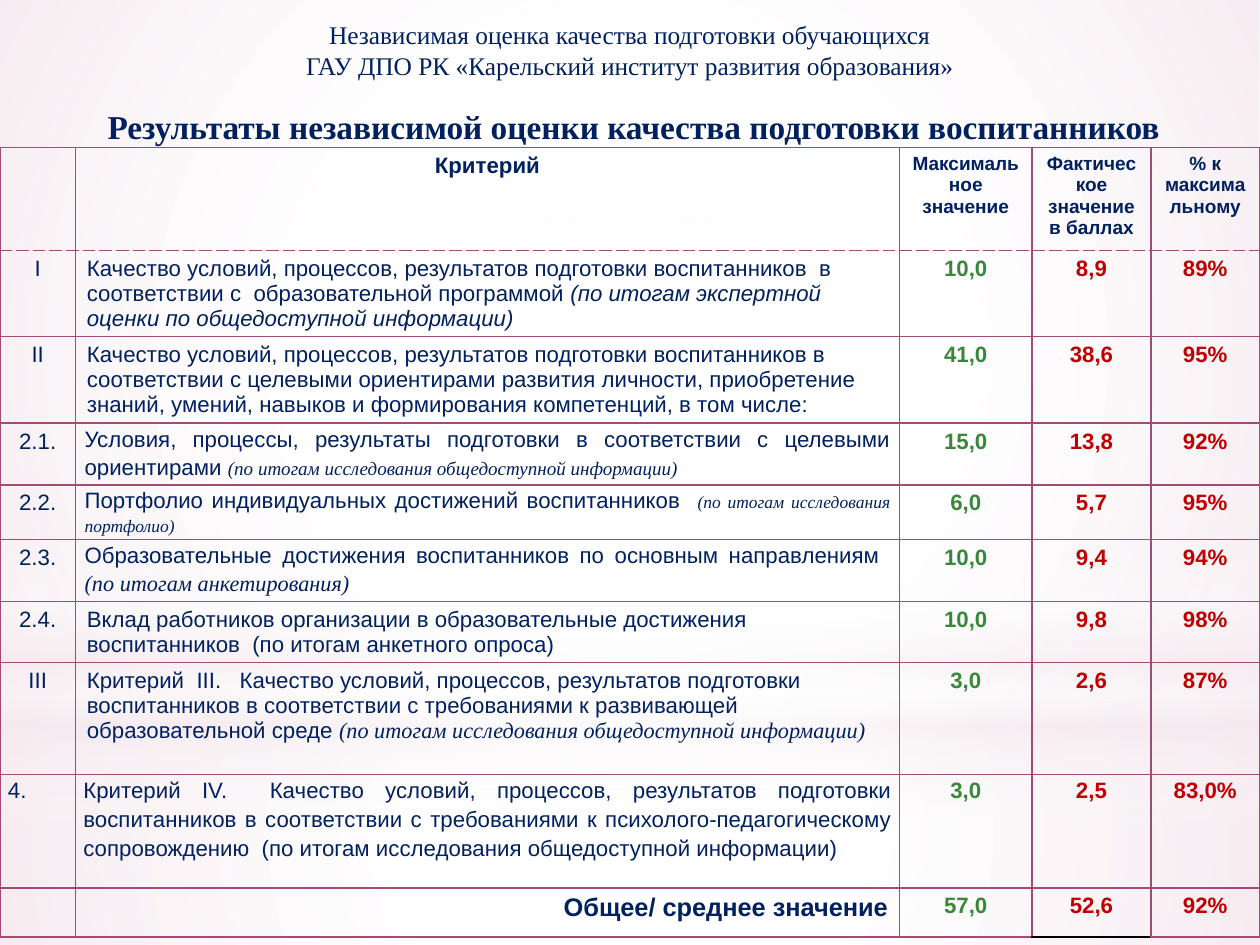
from dataclasses import dataclass

from lxml import etree
from pptx import Presentation, util as u
from pptx.dml.color import RGBColor
from pptx.enum import shapes, text
from pptx.oxml import ns

NAVY, GREEN, RED, PLUM = "002060", "39873B", "C00000", "A34B73"
WHITE, PINK = "FFFFFF", "F4E7ED"
SANS, SERIF = "Arial", "Times New Roman"
LEFT, CENTER = text.PP_ALIGN.LEFT, text.PP_ALIGN.CENTER
RIGHT, JUSTIFY = text.PP_ALIGN.RIGHT, text.PP_ALIGN.JUSTIFY
RECTANGLE, OVAL = shapes.MSO_SHAPE.RECTANGLE, shapes.MSO_SHAPE.OVAL
CM_PER_INCH = 2.54
WIDTH, HEIGHT = 28 / CM_PER_INCH, 21 / CM_PER_INCH
COLUMN_WIDTHS = (0.66, 7.21, 1.16, 1.04, 0.95)
HEADER_HEIGHT = 0.9
HEADERS = ("", "Критерий", "Максимальное значение",
           "Фактическое значение в баллах", "% к максимальному")


@dataclass
class Glow:
    outline: shapes.MSO_SHAPE
    top: float
    height: float
    stops: tuple
    radial: bool = True


@dataclass
class Criterion:
    number: str
    name: str
    scores: tuple
    height: float
    note: str = ""
    note_font: str = SERIF
    note_size: float = 14
    size: float = 14
    bold: bool = False
    align: text.PP_ALIGN = LEFT
    number_align: text.PP_ALIGN = CENTER
    name_inset: tuple = (0.1, 0.05)
    inset: tuple = (0.1, 0.05)
    name_spacing: float = 1
    spacing: float = 1


GLOWS = (
    Glow(RECTANGLE, 6.15, 2.11, ((0, WHITE, 91), (37, WHITE, 76), (100, PINK, 79))),
    Glow(RECTANGLE, 0, 6.15, ((0, WHITE, 89), (48, WHITE, 62), (100, PINK, 79))),
    Glow(RECTANGLE, 4.54, 2.76, ((0, WHITE, 0), (29, WHITE, 30), (45, PINK, 40),
                                 (55, WHITE, 26), (65, PINK, 60), (100, WHITE, 0)), False),
    Glow(OVAL, 1.93, 6.15, ((0, WHITE, 100), (56, WHITE, 0))),
)

JUSTIFIED = dict(align=JUSTIFY, name_inset=(0.08, 0), name_spacing=1.15)

CRITERIA = (
    Criterion("I", "Качество условий, процессов, результатов подготовки воспитанников  "
              "в соответствии с  образовательной программой ", ("10,0", "8,9", "89%"), 0.75,
              "(по итогам экспертной оценки по общедоступной информации)", SANS),
    Criterion("II", "Качество условий, процессов, результатов подготовки воспитанников "
              "в соответствии с целевыми ориентирами развития личности, приобретение "
              "знаний, умений, навыков и формирования компетенций, в том числе:",
              ("41,0", "38,6", "95%"), 0.74),
    Criterion("2.1.", "Условия, процессы, результаты подготовки в соответствии "
              "с целевыми ориентирами ", ("15,0", "13,8", "92%"), 0.54,
              "(по итогам исследования общедоступной информации)", note_size=12, **JUSTIFIED),
    Criterion("2.2.", "Портфолио индивидуальных достижений воспитанников  ",
              ("6,0", "5,7", "95%"), 0.48, "(по итогам исследования портфолио)",
              note_size=11, **JUSTIFIED),
    Criterion("2.3.", "Образовательные достижения воспитанников по основным направлениям  ",
              ("10,0", "9,4", "94%"), 0.54, "(по итогам анкетирования)", **JUSTIFIED),
    Criterion("2.4.", "Вклад работников организации в образовательные достижения  "
              "воспитанников  (по итогам анкетного опроса)", ("10,0", "9,8", "98%"), 0.52),
    Criterion("III", "Критерий  III.   Качество условий, процессов, результатов подготовки "
              "воспитанников в соответствии с требованиями к развивающей "
              "образовательной среде ", ("3,0", "2,6", "87%"), 0.98,
              "(по итогам исследования общедоступной информации)"),
    Criterion("4.", "Критерий IV.  Качество условий, процессов, результатов подготовки "
              "воспитанников в соответствии с требованиями к психолого-педагогическому "
              "сопровождению  (по итогам исследования общедоступной информации)",
              ("3,0", "2,5", "83,0%"), 0.99, align=JUSTIFY, number_align=LEFT,
              name_inset=(0.07, 0), inset=(0.07, 0), name_spacing=1.15, spacing=1.15),
    Criterion("", "Общее/ среднее значение", ("57,0", "52,6", "92%"), 0.43,
              size=16, bold=True, align=RIGHT),
)


def add_element(parent, tag: str, **attributes: str):
    return etree.SubElement(parent, ns.qn(tag), attributes)


def style_run(span, size: float, color: str = NAVY, bold: bool = False,
              font: str = SANS, italic: bool = False) -> None:
    span.font.size = u.Pt(size)
    span.font.name = font
    span.font.bold = bold
    span.font.italic = italic
    span.font.color.rgb = RGBColor.from_string(color)


def add_glow(page, glow: Glow) -> None:
    shape = page.shapes.add_shape(glow.outline, 0, u.Inches(glow.top),
                                  u.Inches(WIDTH), u.Inches(glow.height))
    shape.shadow.inherit = False
    shape.line.fill.background()
    shape.fill.background()
    empty_fill = shape.element.spPr.find(ns.qn("a:noFill"))
    gradient = etree.Element(ns.qn("a:gradFill"), rotWithShape="1")
    stops = add_element(gradient, "a:gsLst")
    for position, color, opacity in glow.stops:
        stop = add_element(stops, "a:gs", pos=str(position * 1000))
        tint = add_element(stop, "a:srgbClr", val=color)
        add_element(tint, "a:alpha", val=str(opacity * 1000))
    if glow.radial:
        route = add_element(gradient, "a:path", path="circle")
        add_element(route, "a:fillToRect", **dict.fromkeys("ltrb", "50000"))
    else:
        add_element(gradient, "a:lin", ang="5400000", scaled="0")
    shape.element.spPr.replace(empty_fill, gradient)


def fill_heading(box, bounds: tuple, words: str, size: float, bold: bool) -> None:
    box.left, box.top, box.width, box.height = map(u.Inches, bounds)
    frame = box.text_frame
    frame.word_wrap = True
    frame.auto_size = text.MSO_AUTO_SIZE.NONE
    frame.vertical_anchor = text.MSO_ANCHOR.TOP
    frame.margin_left = frame.margin_right = u.Inches(0.11)
    frame.margin_top = frame.margin_bottom = u.Inches(0.05)
    frame.text = words
    para = frame.paragraphs[0]
    para.alignment = CENTER
    for span in para.runs:
        style_run(span, size, bold=bold, font=SERIF)


def set_borders(cell, top_dash: str, bottom_dash: str, bottom_color: str) -> None:
    cell.fill.background()
    sides = (("L", PLUM, "solid"), ("R", PLUM, "solid"),
             ("T", PLUM, top_dash), ("B", bottom_color, bottom_dash))
    properties = cell._tc.get_or_add_tcPr()
    for index, (side, color, dash) in enumerate(sides):
        line = etree.Element(ns.qn(f"a:ln{side}"), w=str(u.Pt(1)))
        add_element(add_element(line, "a:solidFill"), "a:srgbClr", val=color)
        add_element(line, "a:prstDash", val=dash)
        properties.insert(index, line)


def fill_cell(cell, words: str, size: float, color: str = NAVY, bold: bool = False,
              align: text.PP_ALIGN = CENTER, inset: tuple = (0.1, 0.05),
              spacing: float = 1):
    cell.margin_left = cell.margin_right = u.Inches(inset[0])
    cell.margin_top = cell.margin_bottom = u.Inches(inset[1])
    para = cell.text_frame.paragraphs[0]
    para.text = words
    para.alignment = align
    para.line_spacing = spacing
    for span in para.runs:
        style_run(span, size, color, bold)
    return para


def fill_criterion(cells: list, item: Criterion) -> None:
    shared = dict(inset=item.inset, spacing=item.spacing)
    fill_cell(cells[0], item.number, 14, align=item.number_align, **shared)
    para = fill_cell(cells[1], item.name, item.size, bold=item.bold, align=item.align,
                     inset=item.name_inset, spacing=item.name_spacing)
    if item.note:
        span = para.add_run()
        span.text = item.note
        style_run(span, item.note_size, font=item.note_font, italic=True)
    for cell, score, color in zip(cells[2:], item.scores, (GREEN, RED, RED)):
        fill_cell(cell, score, 14, color, True, **shared)


def add_results(page) -> None:
    heights = [HEADER_HEIGHT] + [item.height for item in CRITERIA]
    table = page.shapes.add_table(len(heights), len(COLUMN_WIDTHS), 0, u.Inches(1.29),
                                  u.Inches(WIDTH), u.Inches(sum(heights))).table
    table.first_row = table.horz_banding = False
    for column, width in zip(table.columns, COLUMN_WIDTHS):
        column.width = u.Inches(width)
    for row_index, (row, height) in enumerate(zip(table.rows, heights)):
        row.height = u.Inches(height)
        for column_index, cell in enumerate(row.cells):
            last_actual = row_index == len(CRITERIA) and column_index == 3
            set_borders(cell, "sysDash" if row_index == 1 else "solid",
                        "sysDash" if row_index == 0 else "solid",
                        "000000" if last_actual else PLUM)
    for column_index, header in enumerate(HEADERS):
        fill_cell(table.cell(0, column_index), header, 14 if column_index == 1 else 12, bold=True)
    for row_index, item in enumerate(CRITERIA, start=1):
        fill_criterion(list(table.rows[row_index].cells), item)


def main() -> None:
    deck = Presentation()
    deck.slide_width = u.Inches(WIDTH)
    deck.slide_height = u.Inches(HEIGHT)
    page = deck.slides.add_slide(deck.slide_layouts[5])
    for glow in GLOWS:
        add_glow(page, glow)
    title = page.shapes.title
    page.shapes._spTree.append(title.element)
    fill_heading(title, (0.55, 0.12, 9.92, 0.59),
                 "Независимая оценка качества подготовки обучающихся\v"
                 "ГАУ ДПО РК «Карельский институт развития образования»", 16, False)
    fill_heading(page.shapes.add_textbox(0, 0, 0, 0), (0.31, 0.88, 10.47, 0.47),
                 "Результаты независимой оценки качества подготовки воспитанников", 21, True)
    add_results(page)
    deck.save("out.pptx")


if __name__ == "__main__":
    main()
